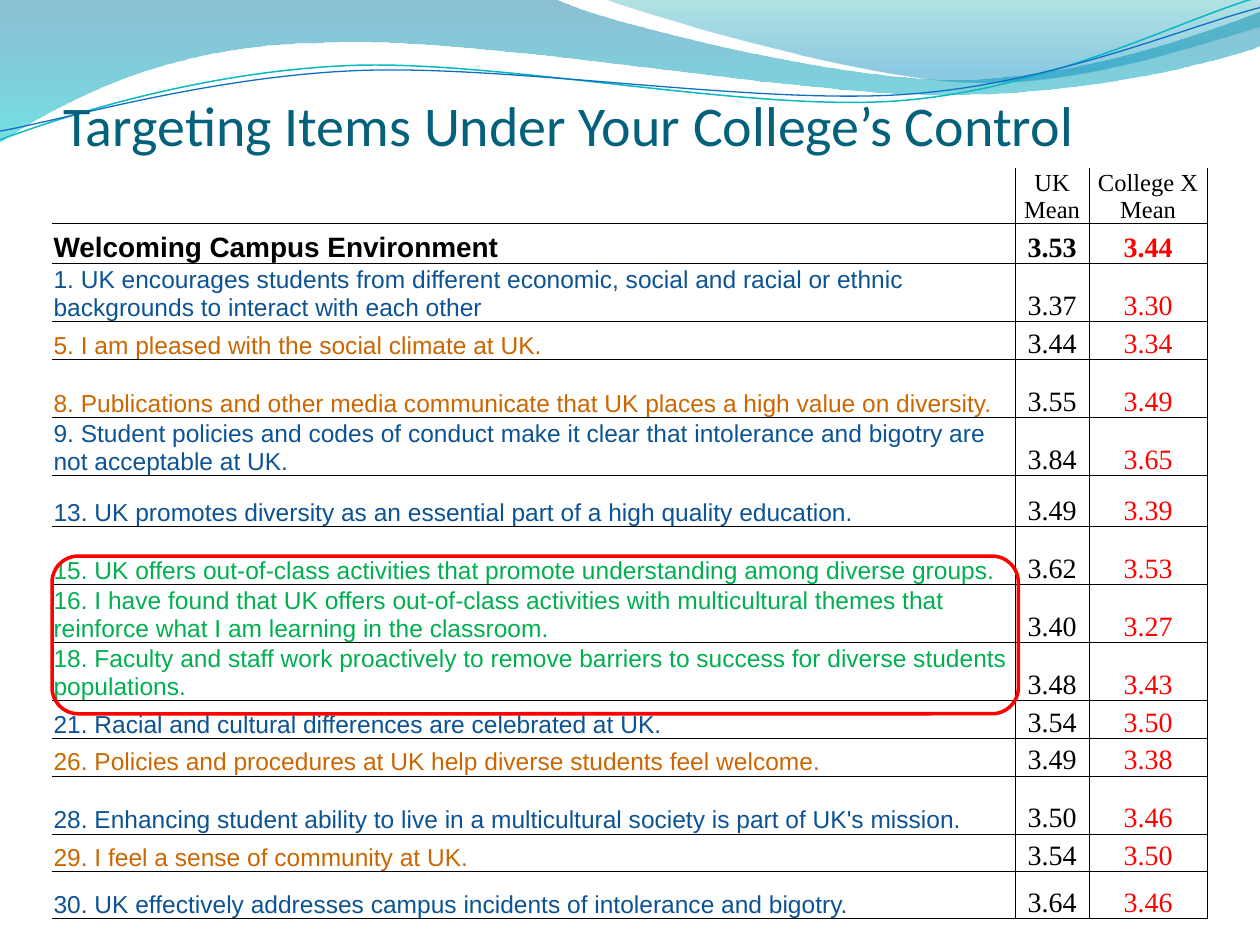
import math
from typing import NamedTuple, Optional

import pptx
import pptx.dml.color
import pptx.enum.shapes
import pptx.enum.text
import pptx.oxml
import pptx.oxml.ns
import pptx.util
from lxml import etree

Cm = pptx.util.Cm
Pt = pptx.util.Pt
RGBColor = pptx.dml.color.RGBColor
Align = pptx.enum.text.PP_ALIGN
Anchor = pptx.enum.text.MSO_ANCHOR
qn = pptx.oxml.ns.qn

BLACK = RGBColor(0x00, 0x00, 0x00)
WHITE = RGBColor(0xFF, 0xFF, 0xFF)
RED = RGBColor(0xFF, 0x00, 0x00)
BLUE = RGBColor(0x0B, 0x53, 0x94)
ORANGE = RGBColor(0xCC, 0x66, 0x00)
GREEN = RGBColor(0x00, 0xB0, 0x50)
TITLE_TEAL = RGBColor(0x04, 0x61, 0x7B)

CM_PER_UNIT = 2.54  # wave points are given in inches


class Stop(NamedTuple):
    position: float
    color: RGBColor
    opacity: int


class Wave(NamedTuple):
    """A start point, then segments of one point (line) or three (Bezier curve)."""
    start: tuple
    segments: list
    stops: tuple = ()
    line_color: Optional[RGBColor] = None
    line_width: float = 0
    tilt: float = 0
    pivot: tuple = (0, 0)


class Item(NamedTuple):
    text: str
    color: RGBColor
    uk_mean: str
    college_mean: str
    height: float
    size: int = 14
    bold: bool = False


WAVES = [
    Wave((0, -0.01), [((4.4, -0.01),),
                      ((4.76, 0.17), (6.64, 0.63), (7.58, 0.63)),
                      ((8.53, 0.63), (9.58, 0.26), (10, 0.09)),
                      ((10.01, 0.36),),
                      ((9.83, 0.44), (8.7, 0.76), (7.46, 0.75)),
                      ((6.22, 0.75), (3.82, 0.28), (2.57, 0.34)),
                      ((1.29, 0.35), (0.46, 0.83), (-0.01, 1.13)),
                      ((0, -0.01),)],
         stops=(Stop(0, RGBColor(0x00, 0x74, 0xA1), 45),
                Stop(1, RGBColor(0x00, 0xC6, 0xCF), 55))),
    Wave((4.79, -0.01), [((5.09, 0.11), (6.82, 0.62), (7.69, 0.65)),
                         ((8.56, 0.69), (9.61, 0.32), (10, 0.21)),
                         ((10, 0),),
                         ((4.79, -0.01),)],
         stops=(Stop(0, RGBColor(0x00, 0xA1, 0xA9), 30),
                Stop(0.8, RGBColor(0x00, 0x8B, 0xBF), 45))),
    Wave((0, 1.11), [((0.48, 0.93), (1.58, 0.57), (2.77, 0.52)),
                     ((3.95, 0.47), (5.93, 0.89), (7.13, 0.8)),
                     ((8.33, 0.71), (9.38, 0.15), (9.98, -0.02))],
         line_color=RGBColor(0x0A, 0xB8, 0xBF), line_width=0.85,
         tilt=-2.7, pivot=(4.99, 0.57)),
    Wave((0, 1.04), [((0.47, 0.96), (1.64, 0.61), (2.83, 0.56)),
                     ((4.03, 0.51), (5.97, 0.83), (7.17, 0.75)),
                     ((8.36, 0.67), (9.41, 0.21), (10, 0.06))],
         line_color=RGBColor(0x0F, 0x6F, 0xC6), line_width=0.75,
         tilt=-2.7, pivot=(4.99, 0.59)),
]

SHORT, TALL = 0.76, 1.17
HEADER_HEIGHT = 0.79
COLUMN_WIDTHS = (19.41, 1.5, 2.37)
ITEMS = [
    Item("Welcoming Campus Environment", BLACK, "3.53", "3.44", 0.81, 16, True),
    Item("1. UK encourages students from different economic, social and racial or ethnic "
         "backgrounds to interact with each other", BLUE, "3.37", "3.30", TALL),
    Item("5. I am pleased with the social climate at UK.", ORANGE, "3.44", "3.34", SHORT),
    Item("8. Publications and other media communicate that UK places a high value on "
         "diversity.", ORANGE, "3.55", "3.49", TALL),
    Item("9. Student policies and codes of conduct make it clear that intolerance and "
         "bigotry are not acceptable at UK.", BLUE, "3.84", "3.65", TALL),
    Item("13. UK promotes diversity as an essential part of a high quality education.",
         BLUE, "3.49", "3.39", 1.03),
    Item("15. UK offers out-of-class activities that promote understanding among diverse "
         "groups.", GREEN, "3.62", "3.53", TALL),
    Item("16. I have found that UK offers out-of-class activities with multicultural "
         "themes that reinforce what I am learning in the classroom.",
         GREEN, "3.40", "3.27", TALL),
    Item("18. Faculty and staff work proactively to remove barriers to success for "
         "diverse students populations.", GREEN, "3.48", "3.43", TALL),
    Item("21. Racial and cultural differences are celebrated at UK.",
         BLUE, "3.54", "3.50", SHORT),
    Item("26. Policies and procedures at UK help diverse students feel welcome.",
         ORANGE, "3.49", "3.38", SHORT),
    Item("28. Enhancing student ability to live in a multicultural society is part of "
         "UK's mission.", BLUE, "3.50", "3.46", TALL),
    Item("29. I feel a sense of community at UK.", ORANGE, "3.54", "3.50", SHORT),
    Item("30. UK effectively addresses campus incidents of intolerance and bigotry.",
         BLUE, "3.64", "3.46", 0.94),
]


def write(frame, text: str, *, font: str, size: float, color: RGBColor,
          bold: bool = False, align=Align.LEFT) -> None:
    para = frame.paragraphs[0]
    para.alignment = align
    span = para.add_run()
    span.text = text
    span.font.name, span.font.size, span.font.bold = font, Pt(size), bold
    span.font.color.rgb = color


def untilted(wave: Wave, point: tuple) -> tuple:
    """Turn a point back by the tilt that the finished shape receives."""
    angle = math.radians(-wave.tilt)
    dx, dy = point[0] - wave.pivot[0], point[1] - wave.pivot[1]
    x = wave.pivot[0] + dx * math.cos(angle) - dy * math.sin(angle)
    y = wave.pivot[1] + dx * math.sin(angle) + dy * math.cos(angle)
    return Cm(x * CM_PER_UNIT), Cm(y * CM_PER_UNIT)


def bend(shape, segments: list) -> None:
    """Join the straight steps of each three-point segment into one Bezier curve."""
    steps = iter(list(shape.element.iter(qn("a:lnTo"))))
    for segment in segments:
        lines = [next(steps) for _ in segment]
        if len(lines) == 3:
            curve = etree.Element(qn("a:cubicBezTo"))
            lines[0].addprevious(curve)
            for line in lines:
                curve.append(line[0])
                line.getparent().remove(line)


def draw_wave(page, wave: Wave) -> None:
    builder = page.shapes.build_freeform(*untilted(wave, wave.start))
    builder.add_line_segments([untilted(wave, point) for segment in wave.segments
                               for point in segment], close=bool(wave.stops))
    shape = builder.convert_to_shape()
    bend(shape, wave.segments)
    shape.rotation = wave.tilt
    shape.shadow.inherit = False
    if not wave.stops:
        shape.fill.background()
        shape.line.color.rgb = wave.line_color
        shape.line.width = Pt(wave.line_width)
        return
    shape.line.fill.background()
    shape.fill.gradient()
    shape.fill.gradient_angle = 270
    for target, stop in zip(shape.fill.gradient_stops, wave.stops):
        target.position, target.color.rgb = stop.position, stop.color
    for color, stop in zip(shape.element.spPr.iter(qn("a:srgbClr")), wave.stops):
        etree.SubElement(color, qn("a:alpha")).set("val", str(stop.opacity * 1000))


def set_borders(cell, visible: str) -> None:
    """Rule the sides named in visible (letters of LRTB) and clear the others."""
    properties = cell._tc.get_or_add_tcPr()
    for side in "LRTB":
        line = etree.SubElement(properties, qn(f"a:ln{side}"), w=str(Pt(0.5)))
        if side in visible:
            fill = etree.SubElement(line, qn("a:solidFill"))
            etree.SubElement(fill, qn("a:srgbClr"), val=str(BLACK))
        else:
            etree.SubElement(line, qn("a:noFill"))


def draw_table(page) -> None:
    heights = [HEADER_HEIGHT] + [item.height for item in ITEMS]
    table = page.shapes.add_table(len(heights), len(COLUMN_WIDTHS), Cm(1.05), Cm(3.38),
                                  Cm(sum(COLUMN_WIDTHS)), Cm(sum(heights))).table
    table.first_row = table.horz_banding = False
    for column, width in zip(table.columns, COLUMN_WIDTHS):
        column.width = Cm(width)
    for r, height in enumerate(heights):
        table.rows[r].height = Cm(height)
        for c in range(len(COLUMN_WIDTHS)):
            cell = table.cell(r, c)
            cell.margin_left = cell.margin_right = cell.margin_top = Cm(0.03)
            cell.margin_bottom = 0
            cell.vertical_anchor = Anchor.BOTTOM
            set_borders(cell, "RB" + ("T" if r else "") + ("L" if c else ""))
            if r and not c:
                cell.fill.background()
            else:
                cell.fill.solid()
                cell.fill.fore_color.rgb = WHITE

    serif = dict(font="Times New Roman", align=Align.CENTER)
    for c, heading in enumerate(("UK Mean", "College X Mean"), start=1):
        write(table.cell(0, c).text_frame, heading, size=14, color=BLACK, **serif)
    for r, item in enumerate(ITEMS, start=1):
        write(table.cell(r, 0).text_frame, item.text, font="Arial", size=item.size,
              color=item.color, bold=item.bold)
        for c, (mean, color) in enumerate(((item.uk_mean, BLACK), (item.college_mean, RED)), 1):
            write(table.cell(r, c).text_frame, mean, size=16, color=color,
                  bold=item.bold, **serif)


def draw_title(page) -> None:
    title = page.shapes.title
    title.element.getparent().append(title.element)  # in front of the waves
    title.left, title.top, title.width, title.height = Cm(1.27), Cm(0.84), Cm(23.06), Cm(2.34)
    frame = title.text_frame
    frame.auto_size = pptx.enum.text.MSO_AUTO_SIZE.NONE
    frame.vertical_anchor = Anchor.BOTTOM
    frame.margin_left = frame.margin_right = frame.margin_bottom = 0
    frame.margin_top = Cm(0.13)
    write(frame, "Targeting Items Under Your College’s Control",
          font="Calibri", size=32, color=TITLE_TEAL)


def draw_highlight(page) -> None:
    box = page.shapes.add_shape(pptx.enum.shapes.MSO_SHAPE.ROUNDED_RECTANGLE,
                                Cm(1.05), Cm(11.21), Cm(19.48), Cm(3.18))
    box.shadow.inherit = False
    box.fill.background()
    box.line.color.rgb = RED
    box.line.width = Pt(2)


def main() -> None:
    deck = pptx.Presentation()
    deck.slide_width, deck.slide_height = Cm(25.4), Cm(19.05)
    page = deck.slides.add_slide(deck.slide_layouts.get_by_name("Title Only"))
    for wave in WAVES:
        draw_wave(page, wave)
    draw_title(page)
    draw_table(page)
    draw_highlight(page)
    deck.save("out.pptx")


if __name__ == "__main__":
    main()
